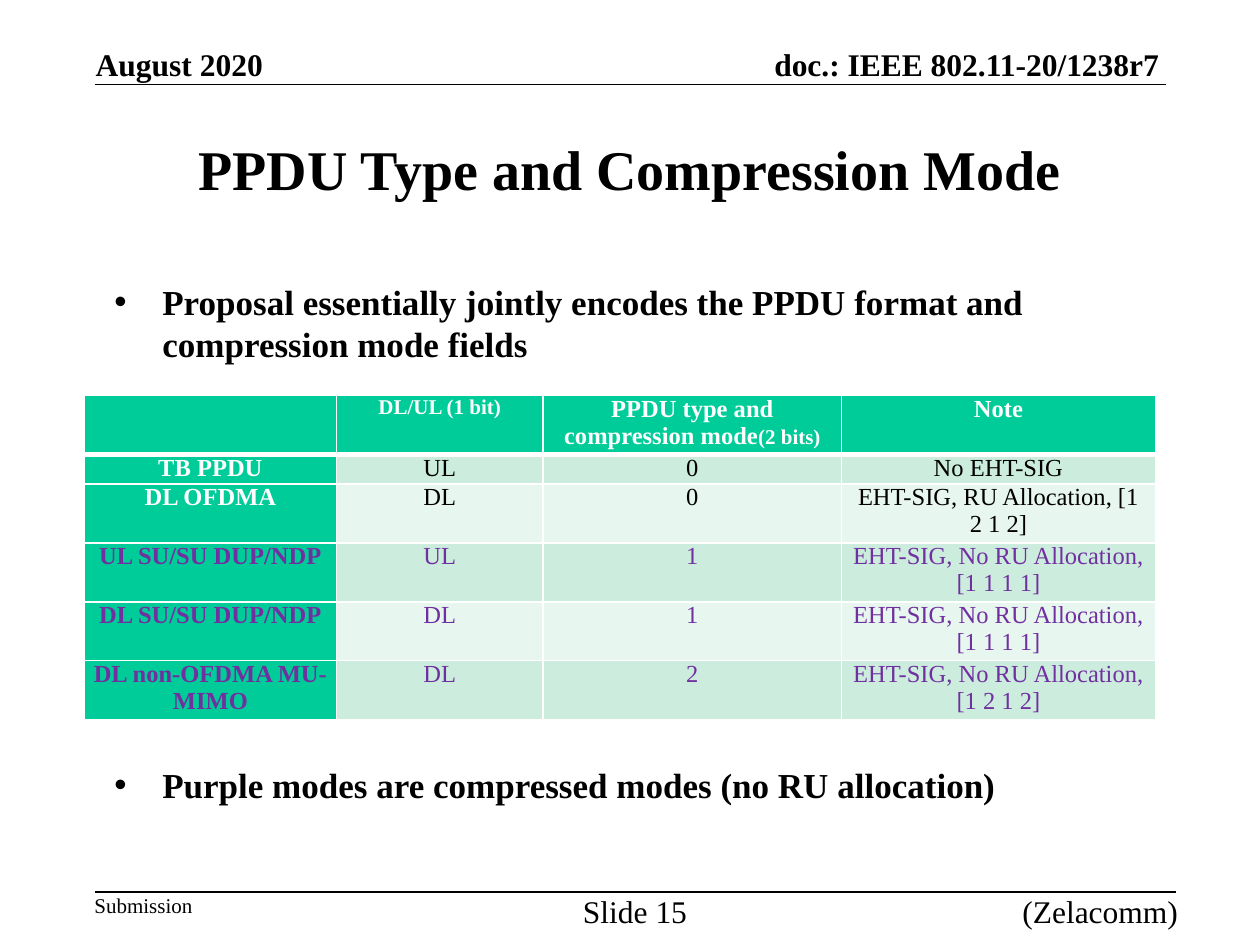
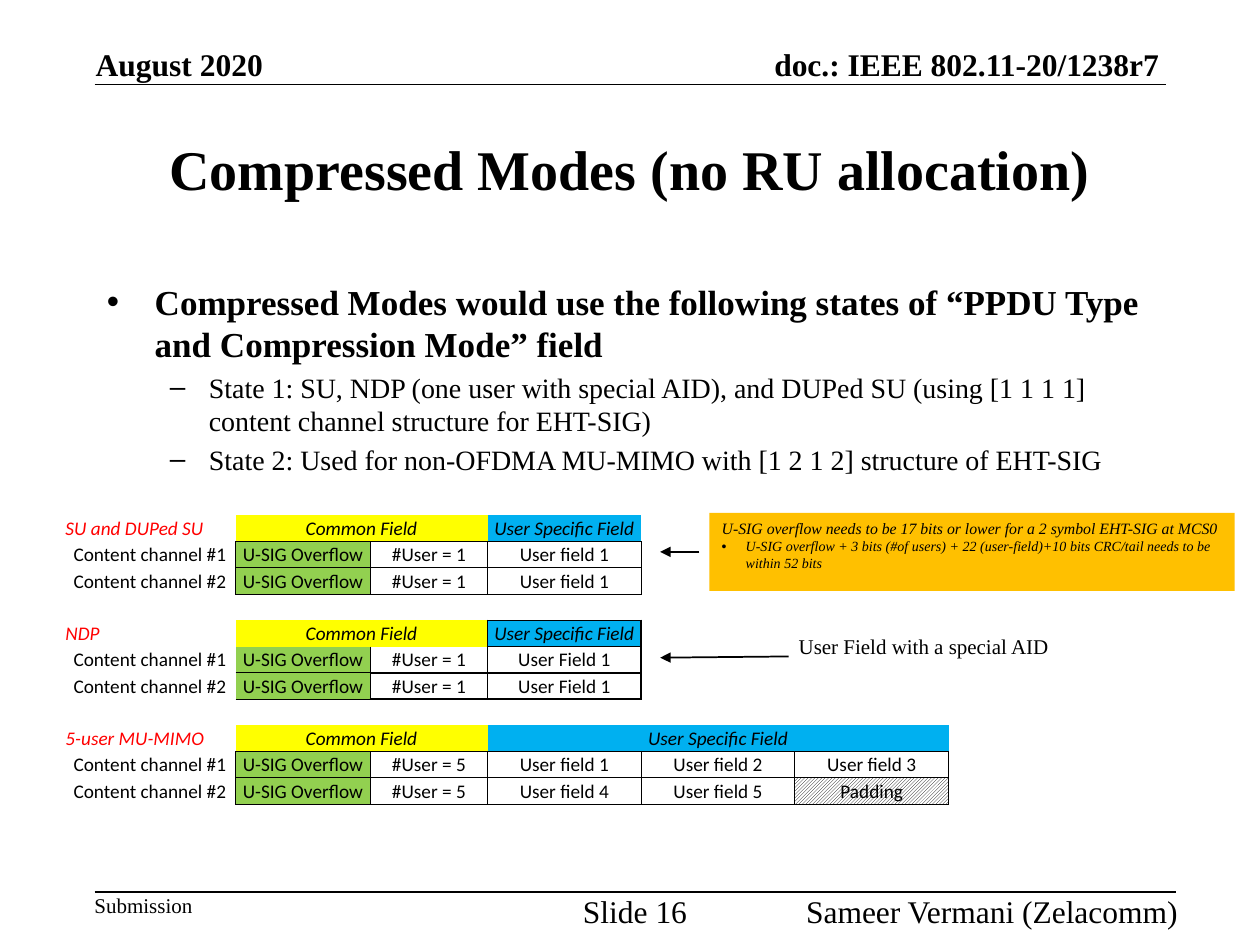
from dataclasses import dataclass

from lxml import etree
from pptx import Presentation
from pptx.dml.color import RGBColor
from pptx.enum import dml, shapes, text
from pptx.oxml.ns import qn
from pptx.util import Inches, Pt

SERIF, SANS = "Times New Roman", "Calibri"
BLACK, WHITE, RED, PURPLE = "000000", "FFFFFF", "FF0000", "7030A0"
GREEN, BAND_DARK, BAND_LIGHT = "00CC99", "CCECDE", "E7F6EF"
YELLOW, BLUE, LIME, AMBER = "FFFF00", "00B0F0", "92D050", "FFC000"
LEFT, CENTER, RIGHT = text.PP_ALIGN.LEFT, text.PP_ALIGN.CENTER, text.PP_ALIGN.RIGHT
TOP, MIDDLE, BOTTOM = text.MSO_ANCHOR.TOP, text.MSO_ANCHOR.MIDDLE, text.MSO_ANCHOR.BOTTOM
PLAIN_TABLE = "{2D5ABB26-0587-4C30-8999-92F81FD0307C}"
SIDES = "LRTB"
NEIGHBORS = {"L": (0, -1, "R"), "R": (0, 1, "L"), "T": (-1, 0, "B"), "B": (1, 0, "T")}


@dataclass
class Style:
    size: float
    color: str = BLACK
    bold: bool = False
    italic: bool = False
    name: str = SERIF
    align: int = LEFT


@dataclass
class Line:
    words: str
    style: Style
    bullet: str = ""
    indent: float = 0
    hang: float = 0
    before: float = 0


@dataclass
class Label:
    left: float
    top: float
    width: float
    height: float
    line: Line
    anchor: int = TOP


@dataclass
class Mode:
    name: str
    users: int
    channels: tuple
    weight: float = 0.5
    overflow_sides: str = SIDES
    count_sides: str = SIDES
    header_sides: str = "B"


def rgb(color: str) -> RGBColor:
    return RGBColor.from_string(color)


def style_paragraph(para, style: Style) -> None:
    para.alignment = style.align
    font = para.font
    font.name, font.size = style.name, Pt(style.size)
    font.bold, font.italic = style.bold, style.italic
    font.color.rgb = rgb(style.color)


def write_lines(frame, lines: list) -> None:
    for index, line in enumerate(lines):
        para = frame.add_paragraph() if index else frame.paragraphs[0]
        para.add_run().text = line.words
        if line.bullet:
            props = para._p.get_or_add_pPr()
            props.set("marL", str(Inches(line.indent)))
            props.set("indent", str(-Inches(line.hang)))
            etree.SubElement(props, qn("a:buFont"), typeface="Arial")
            etree.SubElement(props, qn("a:buChar"), char=line.bullet)
        style_paragraph(para, line.style)
        if line.before:
            para.space_before = Pt(line.before)


def set_margins(area, left: float, top: float, right: float, bottom: float) -> None:
    area.margin_left, area.margin_top = Inches(left), Inches(top)
    area.margin_right, area.margin_bottom = Inches(right), Inches(bottom)


def add_text(page, left: float, top: float, width: float, height: float,
             lines: list, anchor: int = TOP):
    box = page.shapes.add_textbox(Inches(left), Inches(top), Inches(width), Inches(height))
    frame = box.text_frame
    frame.word_wrap = True
    frame.vertical_anchor = anchor
    write_lines(frame, lines)
    return frame


def add_label(page, label: Label) -> None:
    frame = add_text(page, label.left, label.top, label.width, label.height,
                     [label.line], label.anchor)
    set_margins(frame, 0, 0, 0, 0)


def add_line(page, start: tuple, end: tuple, arrow: bool = False) -> None:
    line = page.shapes.add_connector(shapes.MSO_CONNECTOR.STRAIGHT,
                                     *(Inches(value) for value in start + end))
    line.line.color.rgb = rgb(BLACK)
    line.line.width = Pt(1)
    if arrow:
        etree.SubElement(line.line._get_or_add_ln(), qn("a:tailEnd"), type="triangle")
    etree.SubElement(line._element.spPr, qn("a:effectLst"))


def add_page(deck, title: str, number: int, author: str):
    page = deck.slides.add_slide(deck.slide_layouts[6])
    head = Style(18, bold=True)
    labels = [
        Label(5.61, 0.36, 3.59, 0.3,
              Line("doc.: IEEE 802.11-20/1238r7", Style(18, bold=True, align=RIGHT)), BOTTOM),
        Label(0.76, 0.36, 1.59, 0.3, Line("August 2020", head), BOTTOM),
        Label(0.75, 7.08, 0.9, 0.2, Line("Submission", Style(12))),
        Label(4.44, 7.08, 1.2, 0.3, Line(f"Slide {number}", Style(18, align=CENTER))),
        Label(5.85, 7.08, 3.5, 0.3, Line(author, Style(18, align=RIGHT))),
    ]
    for label in labels:
        add_label(page, label)
    add_line(page, (0.75, 0.67), (9.25, 0.67))
    add_line(page, (0.75, 7.08), (9.33, 7.08))
    add_text(page, 0.75, 0.75, 8.5, 1.17,
             [Line(title, Style(32, bold=True, align=CENTER))], MIDDLE)
    return page


def add_grid(page, left: float, top: float, widths: list, heights: list):
    grid = page.shapes.add_table(len(heights), len(widths), Inches(left), Inches(top),
                                 Inches(sum(widths)), Inches(sum(heights))).table
    grid._tbl.tblPr.find(qn("a:tableStyleId")).text = PLAIN_TABLE
    for column, width in zip(grid.columns, widths):
        column.width = Inches(width)
    for row, height in zip(grid.rows, heights):
        row.height = Inches(height)
    for cell in grid.iter_cells():
        cell.fill.background()
        for side in SIDES:
            set_border(cell, side)
    return grid


def fill_cell(cell, color: str) -> None:
    cell.fill.solid()
    cell.fill.fore_color.rgb = rgb(color)


def set_border(cell, side: str, color: str = "", weight: float = 0) -> None:
    props = cell._tc.get_or_add_tcPr()
    previous = props.find(qn(f"a:ln{side}"))
    if previous is not None:
        props.remove(previous)
    line = etree.Element(qn(f"a:ln{side}"), w=str(Pt(weight)))
    if color:
        fill = etree.SubElement(line, qn("a:solidFill"))
        etree.SubElement(fill, qn("a:srgbClr"), val=color)
    else:
        etree.SubElement(line, qn("a:noFill"))
    props.insert(SIDES.index(side), line)


def frame_cell(grid, row: int, column: int, sides: str, color: str, weight: float) -> None:
    for side in sides:
        set_border(grid.cell(row, column), side, color, weight)
        down, across, facing = NEIGHBORS[side]
        near_row, near_column = row + down, column + across
        if 0 <= near_row < len(grid.rows) and 0 <= near_column < len(grid.columns):
            set_border(grid.cell(near_row, near_column), facing, color, weight)


def add_encoding_table(page) -> None:
    headers = [[], [("DL/UL (1 bit)", 12)],
               [("PPDU type and compression mode", 14), ("(2 bits)", 12)], [("Note", 14)]]
    rows = [
        ("TB PPDU", "UL", "0", "No EHT-SIG", False),
        ("DL OFDMA", "DL", "0", "EHT-SIG, RU Allocation, [1 2 1 2]", False),
        ("UL SU/SU DUP/NDP", "UL", "1", "EHT-SIG, No RU Allocation,[1 1 1 1]", True),
        ("DL SU/SU DUP/NDP", "DL", "1", "EHT-SIG, No RU Allocation, [1 1 1 1]", True),
        ("DL non-OFDMA MU-MIMO", "DL", "2", "EHT-SIG, No RU Allocation, [1 2 1 2]", True),
    ]
    grid = add_grid(page, 0.67, 3.14, [2, 1.64, 2.37, 2.49], [0.17] * 6)
    for cell in grid.iter_cells():
        set_margins(cell, 0.07, 0, 0.07, 0)
    for column, spans in enumerate(headers):
        cell = grid.cell(0, column)
        fill_cell(cell, GREEN)
        para = cell.text_frame.paragraphs[0]
        for words, size in spans:
            span = para.add_run()
            span.text = words
            span.font.size = Pt(size)
        style_paragraph(para, Style(14, WHITE, bold=True, align=CENTER))
    for row, (*values, compressed) in enumerate(rows, 1):
        for column, words in enumerate(values):
            first = column == 0
            cell = grid.cell(row, column)
            fill_cell(cell, GREEN if first else BAND_DARK if row % 2 else BAND_LIGHT)
            color = PURPLE if compressed else WHITE if first else BLACK
            write_lines(cell.text_frame,
                        [Line(words, Style(14, color, bold=first, align=CENTER))])
    for row in range(len(rows) + 1):
        for column in range(len(headers)):
            frame_cell(grid, row, column, SIDES, WHITE, 1)
    for column in range(len(headers)):
        set_border(grid.cell(0, column), "B", WHITE, 3)


def add_channel_table(page) -> None:
    modes = [
        Mode("SU and DUPed SU", 1, (("User field 1",),) * 2),
        Mode("NDP", 1, (("User Field 1",),) * 2, 1, "B", "LRB", SIDES),
        Mode("5-user MU-MIMO", 5, (("User field 1", "User field 2", "User field 3"),
                                   ("User field 4", "User field 5", "Padding"))),
    ]
    grid = add_grid(page, 0.51, 4.09, [1.36, 1.07, 0.93] + [1.22] * 4, [2.71 / 13] * 13)
    for cell in grid.iter_cells():
        set_margins(cell, 0.01, 0.01, 0.01, 0)
        cell.vertical_anchor = MIDDLE

    def put(row: int, column: int, words: str, fill: str = "", span: int = 1,
            color: str = BLACK, italic: bool = False, align: int = CENTER) -> None:
        cell = grid.cell(row, column)
        if span > 1:
            cell.merge(grid.cell(row, column + span - 1))
        if fill:
            fill_cell(cell, fill)
        write_lines(cell.text_frame, [Line(words, Style(11, color, False, italic, SANS, align))])

    for index, mode in enumerate(modes):
        top = index * 4
        put(top, 0, mode.name, color=RED, italic=True, align=LEFT)
        put(top, 1, "Common Field", YELLOW, 2, italic=True)
        put(top, 3, "User Specific Field", BLUE, len(mode.channels[0]), italic=True)
        frame_cell(grid, top, 3, mode.header_sides, BLACK, mode.weight)
        if "L" in mode.header_sides:
            set_border(grid.cell(top, 1), "R", BLACK, mode.weight)
        for channel, fields in enumerate(mode.channels, 1):
            row = top + channel
            put(row, 0, f"Content channel #{channel}")
            put(row, 1, "U-SIG Overflow", LIME)
            frame_cell(grid, row, 1, mode.overflow_sides, BLACK, 0.5)
            put(row, 2, f"#User = {mode.users}")
            frame_cell(grid, row, 2, mode.count_sides, BLACK, mode.weight)
            for column, words in enumerate(fields, 3):
                put(row, column, words)
                frame_cell(grid, row, column, SIDES, BLACK, mode.weight)
    padding = grid.cell(10, 5).fill
    padding.patterned()
    padding.pattern = dml.MSO_PATTERN.LIGHT_UPWARD_DIAGONAL
    padding.fore_color.rgb, padding.back_color.rgb = rgb(BLACK), rgb(WHITE)
    for cell in grid.iter_cells():
        if not cell.text_frame.text:
            etree.SubElement(cell.text_frame.paragraphs[0]._p, qn("a:endParaRPr"), sz="1100")


def add_overflow_note(page) -> None:
    note = page.shapes.add_shape(shapes.MSO_SHAPE.RECTANGLE, Inches(5.63), Inches(4.07),
                                 Inches(4.17), Inches(0.62))
    note.shadow.inherit = False
    note.fill.solid()
    note.fill.fore_color.rgb = rgb(AMBER)
    note.line.fill.background()
    note.text_frame.word_wrap = True
    note.text_frame.vertical_anchor = TOP
    write_lines(note.text_frame, [
        Line("U-SIG overflow needs to be 17 bits or lower for a 2 symbol EHT-SIG at MCS0",
             Style(9, italic=True)),
        Line("U-SIG overflow + 3 bits (#of users) + 22 (user-field)+10 bits CRC/tail "
             "needs to be within 52 bits", Style(8, italic=True), "•", 0.19, 0.19),
    ])


def main() -> None:
    deck = Presentation()
    deck.slide_width, deck.slide_height = Inches(10), Inches(7.5)
    point, state = Style(20, bold=True), Style(16)

    page = add_page(deck, "PPDU Type and Compression Mode", 15, "(Zelacomm)")
    add_text(page, 0.75, 2.18, 8.5, 4.5, [
        Line("Proposal essentially jointly encodes the PPDU format and compression mode fields",
             point, "•", 0.44, 0.38),
        Line("Purple modes are compressed modes (no RU allocation)",
             point, "•", 0.44, 0.38, 228),
    ])
    add_encoding_table(page)

    page = add_page(deck, "Compressed Modes (no RU allocation)", 16, "Sameer Vermani (Zelacomm)")
    add_text(page, 0.75, 2.18, 8.5, 4.5, [
        Line("Compressed Modes would use the following states of “PPDU Type and "
             "Compression Mode” field", point, "•", 0.38, 0.38),
        Line("State 1: SU, NDP (one user with special AID), and DUPed SU (using [1 1 1 1] "
             "content channel structure for EHT-SIG)", state, "–", 0.81, 0.31, 3),
        Line("State 2: Used for non-OFDMA MU-MIMO with [1 2 1 2] structure of EHT-SIG",
             state, "–", 0.81, 0.31, 3),
    ])
    add_channel_table(page)
    add_text(page, 6.24, 4.98, 2.21, 0.3, [Line("User Field with a special AID", Style(12))])
    add_line(page, (6.26, 5.21), (5.24, 5.22), arrow=True)
    add_overflow_note(page)
    add_line(page, (5.55, 4.38), (5.24, 4.38), arrow=True)
    deck.save("out.pptx")


if __name__ == "__main__":
    main()
